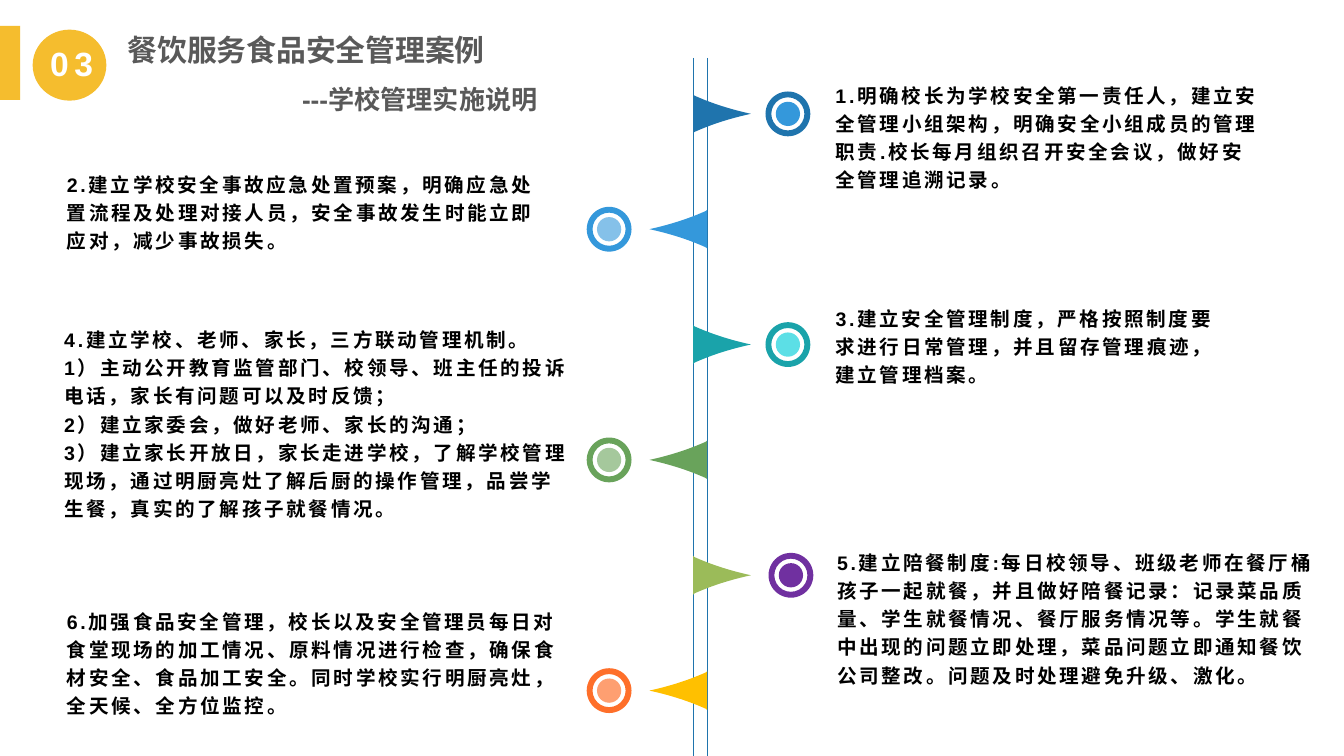
from pptx import Presentation
from pptx.dml.color import RGBColor
from pptx.enum import shapes as es, text as et
from pptx.oxml import ns, xmlchemy as xc
from pptx.util import Pt

GOLD = RGBColor(0xF5, 0xBD, 0x2E)
WHITE = RGBColor(0xFF, 0xFF, 0xFF)
BLACK = RGBColor(0, 0, 0)
GRAY = RGBColor(0x59, 0x59, 0x59)
BLUE = RGBColor(0x1F, 0x74, 0xAD)
SKY = RGBColor(0x34, 0x98, 0xDB)
PALE = RGBColor(0x85, 0xC1, 0xE9)
TEAL = RGBColor(0x1A, 0xA3, 0xAA)
AQUA = RGBColor(0x5C, 0xDF, 0xE6)
GREEN = RGBColor(0x69, 0xA3, 0x5B)
MINT = RGBColor(0xA5, 0xC8, 0x9C)
OLIVE = RGBColor(0x9B, 0xBB, 0x59)
PLUM = RGBColor(0x70, 0x30, 0xA0)
AMBER = RGBColor(0xFF, 0xC0, 0)
RUST = RGBColor(0xFE, 0x6F, 0x2A)
PEACH = RGBColor(0xFE, 0x9F, 0x71)

SHAPE = es.MSO_SHAPE
PAD = 5.3, 2.76
STEPS = [
    (BLUE, BLUE, SKY, 0, (442.3, 32.4, 240.5, 80),
     ["1.明确校长为学校安全第一责任人，建立安全管理小组架构，明确安全小组成员的管理职责."
      "校长每月组织召开安全会议，做好安全管理追溯记录。"]),
    (SKY, SKY, PALE, 0, (30.5, 71.1, 266.5, 83.5),
     ["2.建立学校安全事故应急处置预案，明确应急处置流程及处理对接人员，"
      "安全事故发生时能立即应对，减少事故损失。"]),
    (TEAL, TEAL, AQUA, 0, (442.3, 156.1, 214.5, 57),
     ["3.建立安全管理制度，严格按照制度要求进行日常管理，并且留存管理痕迹，建立管理档案。"]),
    (GREEN, GREEN, MINT, 0, (29.1, 148.3, 283.7, 155.5),
     ["4.建立学校、老师、家长，三方联动管理机制。",
      "1）主动公开教育监管部门、校领导、班主任的投诉电话，家长有问题可以及时反馈；",
      "2）建立家委会，做好老师、家长的沟通；",
      "3）建立家长开放日，家长走进学校，了解学校管理现场，"
      "通过明厨亮灶了解后厨的操作管理，品尝学生餐，真实的了解孩子就餐情况。"]),
    (OLIVE, PLUM, PLUM, 1.6, (443.1, 271.7, 270, 117.4),
     ["5.建立陪餐制度:每日校领导、班级老师在餐厅桶孩子一起就餐，并且做好陪餐记录："
      "记录菜品质量、学生就餐情况、餐厅服务情况等。学生就餐中出现的问题立即处理，"
      "菜品问题立即通知餐饮公司整改。问题及时处理避免升级、激化。"]),
    (AMBER, RUST, PEACH, 0, (30.5, 314.4, 280.8, 80),
     ["6.加强食品安全管理，校长以及安全管理员每日对食堂现场的加工情况、原料情况进行检查，"
      "确保食材安全、食品加工安全。同时学校实行明厨亮灶，全天候、全方位监控。"]),
]


def paint(shape, color):
    """Give a shape a flat fill with no line or shadow."""
    shape.shadow.inherit = False
    shape.fill.solid()
    shape.fill.fore_color.rgb = color
    shape.line.fill.background()
    return shape


def draw(slide, kind, box, color):
    """Add a flat preset shape in a box."""
    return paint(slide.shapes.add_shape(kind, *map(Pt, box)), color)


def write(para, words, size, color, gap=0):
    """Add one bold run to a paragraph."""
    run = para.add_run()
    run.text = words
    font = run.font
    font.name, font.size, font.bold = "Arial", Pt(size), True
    font.color.rgb = color
    if gap:
        font._element.set("spc", str(int(gap * 100)))


def frame(shape, anchor, pad, wrap=True):
    """Set the layout of a text frame and return it."""
    body = shape.text_frame
    body.word_wrap, body.auto_size = wrap, et.MSO_AUTO_SIZE.NONE
    body.vertical_anchor = anchor
    body.margin_left = body.margin_right = Pt(pad[0])
    body.margin_top = body.margin_bottom = Pt(pad[1])
    return body


def badge(slide, box):
    """Draw the section number with its side bar."""
    left, top, width, height = box
    draw(slide, SHAPE.OVAL, (left + 18.2, top + 2, 39.5, 38), GOLD)
    draw(slide, SHAPE.RECTANGLE, (left, top, 11.5, height), GOLD)
    label = slide.shapes.add_textbox(*map(Pt, (left + 22.3, top + 6.3, 36, 26.6)))
    body = frame(label, et.MSO_ANCHOR.TOP, PAD, False)
    write(body.paragraphs[0], "03", 18, WHITE, 3)


def heading(slide, box):
    """Fill the title placeholder with the title and its second line."""
    title = slide.shapes.title
    title.left, title.top, title.width, title.height = map(Pt, box)
    body = frame(title, et.MSO_ANCHOR.TOP, (7.2, 3.6))
    first, second = body.paragraphs[0], body.add_paragraph()
    for para in (first, second):
        para.alignment, para.line_spacing = et.PP_ALIGN.LEFT, 1.5
    second._p.get_or_add_pPr().set("marL", str(Pt(93.4)))
    write(first, "餐饮服务食品安全管理案例", 16, GRAY)
    write(second, "---学校管理实施说明", 14, GRAY)


def spine(slide, box):
    """Draw the two upright lines on the sides of a box."""
    left, top, width, height = box
    for x in (left, left + width):
        line = slide.shapes.add_connector(
            es.MSO_CONNECTOR.STRAIGHT, Pt(x), Pt(top), Pt(x), Pt(top + height))
        line.line.color.rgb, line.line.width = BLUE, Pt(0.5)
        line._element.spPr.append(xc.OxmlElement("a:effectLst"))


def spike(slide, x, y, side, color):
    """Draw a curved pointer whose base is centred on a point."""
    half = [(0, 10.4), (0.8, 9.7), (10, 5.6), (20, 2.4), (31, 0)]
    dots = [(a, -b) for a, b in half] + half[-2::-1]
    spots = [(Pt(x + side * a), Pt(y + b)) for a, b in dots]
    build = slide.shapes.build_freeform(*spots[0])
    build.add_line_segments(spots[1:])
    shape = paint(build.convert_to_shape(), color)
    legs = list(shape._element.iter(ns.qn("a:lnTo")))
    for trio in (legs[1:4], legs[4:7]):
        bend = xc.OxmlElement("a:cubicBezTo")
        trio[0].addprevious(bend)
        for leg in trio:
            bend.append(leg[0])
            leg.getparent().remove(leg)


def ring(slide, x, y, edge, core):
    """Draw a ring with a filled core around a point."""
    donut = draw(slide, SHAPE.DONUT, (x - 12, y - 12, 24, 24), edge)
    donut.adjustments[0] = 0.131
    draw(slide, SHAPE.OVAL, (x - 6.5, y - 6.5, 13, 13), core)


def note(slide, box, lines):
    """Write the text of one step in a box."""
    shape = slide.shapes.add_textbox(*map(Pt, box))
    body = frame(shape, et.MSO_ANCHOR.MIDDLE, PAD)
    for i, words in enumerate(lines):
        para = body.add_paragraph() if i else body.paragraphs[0]
        para.line_spacing = 1.2
        write(para, words, 10.5, BLACK, 1.5)


def steps(slide, box):
    """Hang the steps on alternate sides of the spine box."""
    left, top, width, height = box
    for i, (tip, edge, core, shift, area, lines) in enumerate(STEPS):
        side = -1 if i % 2 else 1
        base = left if side > 0 else left + width
        y = top + 30 + 61.8 * i
        spike(slide, base, y, side, tip)
        ring(slide, left + 2.9 + side * 47.9 + shift, y, edge, core)
        note(slide, area, lines)


def main():
    """Build and save the slide."""
    deck = Presentation()
    deck.slide_width, deck.slide_height = Pt(720), Pt(405)
    slide = deck.slides.add_slide(deck.slide_layouts[5])
    rail = 371.3, 31, 7.6, 374
    badge(slide, (-0.7, 13.9, 58, 39.6))
    heading(slide, (61.2, 3.8, 264.2, 62))
    spine(slide, rail)
    steps(slide, rail)
    deck.save("out.pptx")


if __name__ == "__main__":
    main()
